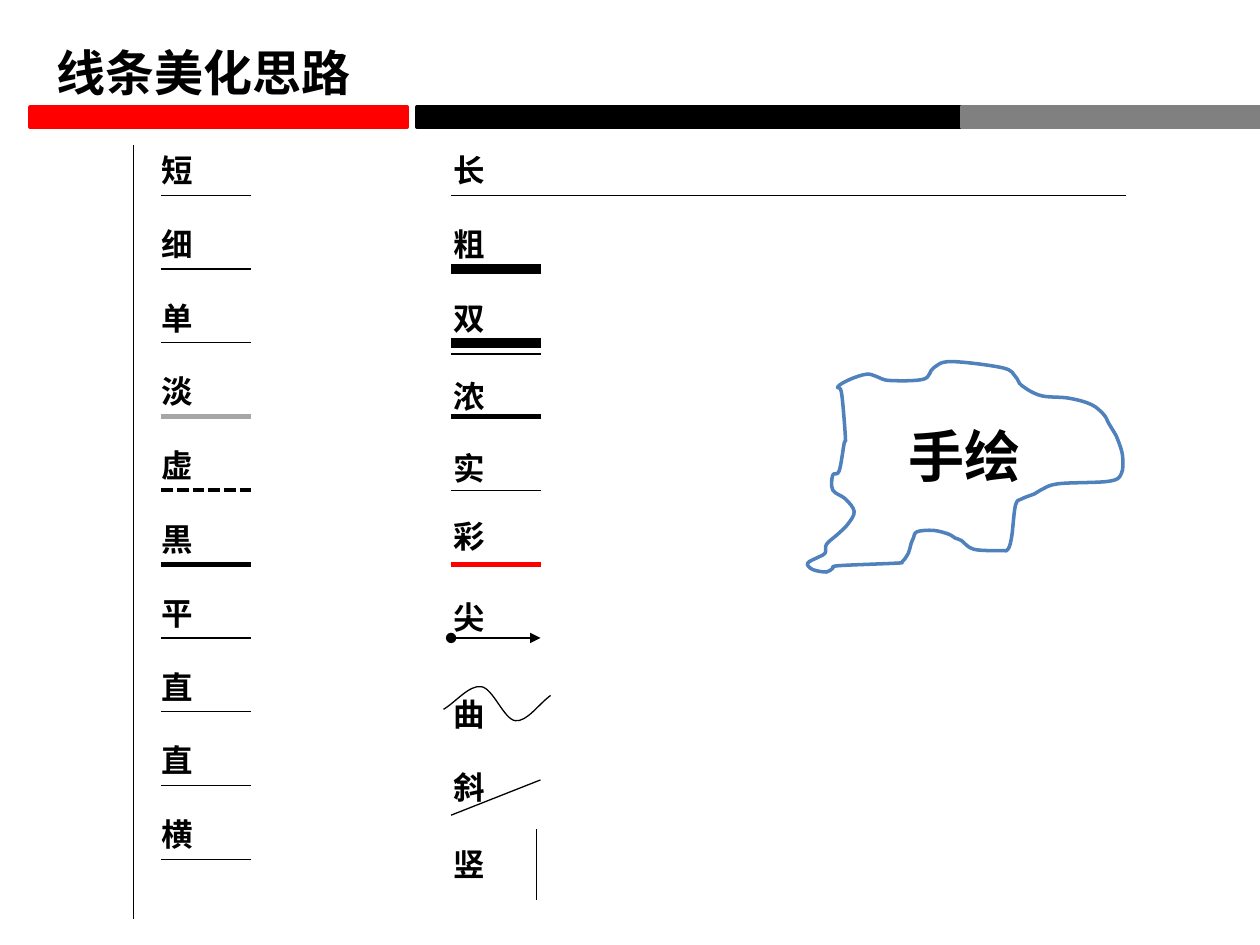
from dataclasses import dataclass
from typing import Optional

from lxml import etree
from pptx import Presentation
from pptx import util as u
from pptx.dml.color import RGBColor
from pptx.enum import dml, shapes, text
from pptx.oxml import ns

COLORS = {"black": "000000", "red": "FF0000", "grey": "808080",
          "pale": "A6A6A6", "blue": "4F81BD"}
FONT = "Noto Sans CJK SC"
FIRST_RULE, LAST_RULE, ROWS = 1.55, 6.82, 10
PITCH = (LAST_RULE - FIRST_RULE) / (ROWS - 1)
LEFT, RIGHT, STROKE = 1.28, 3.58, 0.71
LEFT_LABEL, RIGHT_LABEL, LABEL_RISE = 1.18, 3.5, 0.4
BAR_TOP, BAR_HEIGHT = 0.85, 0.16


@dataclass
class Sample:
    label: str
    weight: Optional[float] = 0.75
    color: str = "black"
    length: float = STROKE
    drop: float = 0
    dash: bool = False
    arrow: bool = False


@dataclass
class Bar:
    left: float
    width: float
    color: str


PLAIN_SAMPLES = [
    Sample("短"), Sample("细"), Sample("单"), Sample("淡", 3, "pale"),
    Sample("虚", 2.25, dash=True), Sample("黒", 3), Sample("平"),
    Sample("直"), Sample("直"), Sample("横"),
]
STYLED_SAMPLES = [
    Sample("长", length=5.36), Sample("粗", 6), Sample("双", 6),
    Sample("浓", 3, drop=0.04), Sample("实", drop=0.02),
    Sample("彩", 3, "red", drop=-0.02), Sample("尖", drop=0.03, arrow=True),
    Sample("曲", None, drop=0.22), Sample("斜", None, drop=0.21),
    Sample("竖", None, drop=0.24),
]
BARS = [Bar(0.24, 2.99, "red"), Bar(3.31, 4.33, "black"), Bar(7.63, 2.99, "grey")]
WAVE = [(3.52, 5.63), (3.82, 5.45), (4.09, 5.72), (4.37, 5.52)]
SKETCH = [
    (6.41, 4.47), (6.5, 4.42), (6.55, 4.39), (6.56, 4.32), (6.65, 4.24),
    (6.73, 4.16), (6.78, 4.06), (6.71, 3.96), (6.61, 3.89),
    (6.61, 3.77), (6.66, 3.74), (6.7, 3.52), (6.71, 3.47),
    (6.68, 3.12), (6.65, 3.07), (6.75, 3.01), (6.88, 2.97), (6.96, 2.99),
    (7.06, 3.02), (7.33, 3.01), (7.41, 2.92), (7.55, 2.87),
    (7.96, 2.92), (8.06, 2.99), (8.11, 3.06), (8.26, 3.14), (8.48, 3.16),
    (8.66, 3.21), (8.76, 3.29), (8.8, 3.36), (8.86, 3.46), (8.88, 3.51),
    (8.91, 3.62), (8.9, 3.76), (8.8, 3.82), (8.4, 3.84), (8.26, 3.89),
    (8.21, 3.92), (8.11, 3.96), (8.06, 4.01), (8.03, 4.26),
    (8, 4.36), (7.95, 4.37), (7.73, 4.36), (7.63, 4.29), (7.58, 4.27),
    (7.53, 4.24), (7.41, 4.21), (7.28, 4.22), (7.25, 4.27), (7.23, 4.32),
    (7.21, 4.39), (7.16, 4.46), (7.11, 4.47), (6.66, 4.49), (6.61, 4.51),
    (6.56, 4.54), (6.45, 4.52), (6.41, 4.47),
]


def rgb(name: str) -> RGBColor:
    return RGBColor.from_string(COLORS[name])


def style_line(line, color: str, weight: float) -> None:
    line.color.rgb = rgb(color)
    line.width = u.Pt(weight)


def write(shape, words: str, size: float) -> None:
    frame = shape.text_frame
    frame.text = words
    frame.word_wrap = False
    frame.vertical_anchor = text.MSO_ANCHOR.TOP
    frame.auto_size = text.MSO_AUTO_SIZE.SHAPE_TO_FIT_TEXT
    frame.paragraphs[0].alignment = text.PP_ALIGN.LEFT
    run = frame.paragraphs[0].runs[0]
    run.font.size, run.font.bold, run.font.name = u.Pt(size), True, FONT
    run.font.color.rgb = rgb("black")
    etree.SubElement(run.font._element, ns.qn("a:ea"), typeface=FONT)


def add_label(slide, words: str, left: float, top: float,
              width: float = 0.45, height: float = 0.4, size: float = 18) -> None:
    box = slide.shapes.add_textbox(*map(u.Inches, (left, top, width, height)))
    write(box, words, size)


def add_rule(slide, x1: float, y1: float, x2: float, y2: float,
             weight: float = 0.75, color: str = "black",
             dash: bool = False, arrow: bool = False) -> None:
    rule = slide.shapes.add_connector(
        shapes.MSO_CONNECTOR.STRAIGHT, *map(u.Inches, (x1, y1, x2, y2)))
    style_line(rule.line, color, weight)
    if dash:
        rule.line.dash_style = dml.MSO_LINE.SQUARE_DOT
    if arrow:
        outline = rule.line._get_or_add_ln()
        for end, kind in (("a:headEnd", "oval"), ("a:tailEnd", "triangle")):
            etree.SubElement(outline, ns.qn(end), type=kind)
    etree.SubElement(rule._element.spPr, ns.qn("a:effectLst"))


def bend_segments(curve, closed: bool) -> None:
    knots = [(int(pt.get("x")), int(pt.get("y")))
             for pt in curve._element.iter(ns.qn("a:pt"))]
    if closed:
        before, after = knots[-2], knots[1]
    else:
        before = tuple(2 * a - b for a, b in zip(knots[0], knots[1]))
        after = tuple(2 * a - b for a, b in zip(knots[-1], knots[-2]))
    padded = [before, *knots, after]
    segments = list(curve._element.iter(ns.qn("a:lnTo")))
    for segment, a, b, c, d in zip(segments, padded, padded[1:], padded[2:], padded[3:]):
        leave = [q + (r - p) / 6 for p, q, r in zip(a, b, c)]
        arrive = [q - (r - p) / 6 for p, q, r in zip(b, c, d)]
        bezier = etree.Element(ns.qn("a:cubicBezTo"))
        for x, y in (leave, arrive, c):
            etree.SubElement(bezier, ns.qn("a:pt"), x=str(round(x)), y=str(round(y)))
        segment.getparent().replace(segment, bezier)


def add_curve(slide, knots: list, closed: bool, color: str, weight: float) -> None:
    points = [(u.Inches(x), u.Inches(y)) for x, y in knots]
    builder = slide.shapes.build_freeform(*points[0])
    builder.add_line_segments(points[1:], close=closed)
    curve = builder.convert_to_shape()
    bend_segments(curve, closed)
    curve.fill.background()
    curve.shadow.inherit = False
    style_line(curve.line, color, weight)


def add_samples(slide, samples: list, left: float, label_left: float) -> None:
    for row, sample in enumerate(samples):
        y = FIRST_RULE + row * PITCH
        if sample.weight:
            add_rule(slide, left, y, left + sample.length, y, sample.weight,
                     sample.color, sample.dash, sample.arrow)
        add_label(slide, sample.label, label_left, y - LABEL_RISE + sample.drop)


def add_bar(slide, bar: Bar) -> None:
    block = slide.shapes.add_shape(
        shapes.MSO_SHAPE.RECTANGLE,
        *map(u.Inches, (bar.left, BAR_TOP, bar.width, BAR_HEIGHT)))
    block.fill.solid()
    block.fill.fore_color.rgb = rgb(bar.color)
    block.shadow.inherit = False
    style_line(block.line, bar.color, 2)


def main() -> None:
    deck = Presentation()
    deck.slide_width, deck.slide_height = u.Inches(10), u.Inches(7.5)
    slide = deck.slides.add_slide(deck.slide_layouts[5])
    title = slide.shapes.title
    title.left, title.top, title.width, title.height = map(
        u.Inches, (0.35, 0.29, 2.56, 0.57))
    write(title, "线条美化思路", 28)

    add_samples(slide, PLAIN_SAMPLES, LEFT, LEFT_LABEL)
    add_samples(slide, STYLED_SAMPLES, RIGHT, RIGHT_LABEL)
    add_rule(slide, RIGHT, 2.81, RIGHT + STROKE, 2.81)
    add_rule(slide, RIGHT, 6.47, RIGHT + STROKE, 6.19)
    add_rule(slide, 4.26, 6.58, 4.26, 7.14)
    add_curve(slide, WAVE, False, "black", 0.75)

    add_curve(slide, SKETCH, True, "blue", 2)
    add_label(slide, "手绘", 7.11, 3.3, 1.1, 0.64, 32)
    for bar in BARS:
        add_bar(slide, bar)
    add_rule(slide, 1.06, 1.15, 1.06, 7.29)
    deck.save("out.pptx")


if __name__ == "__main__":
    main()
